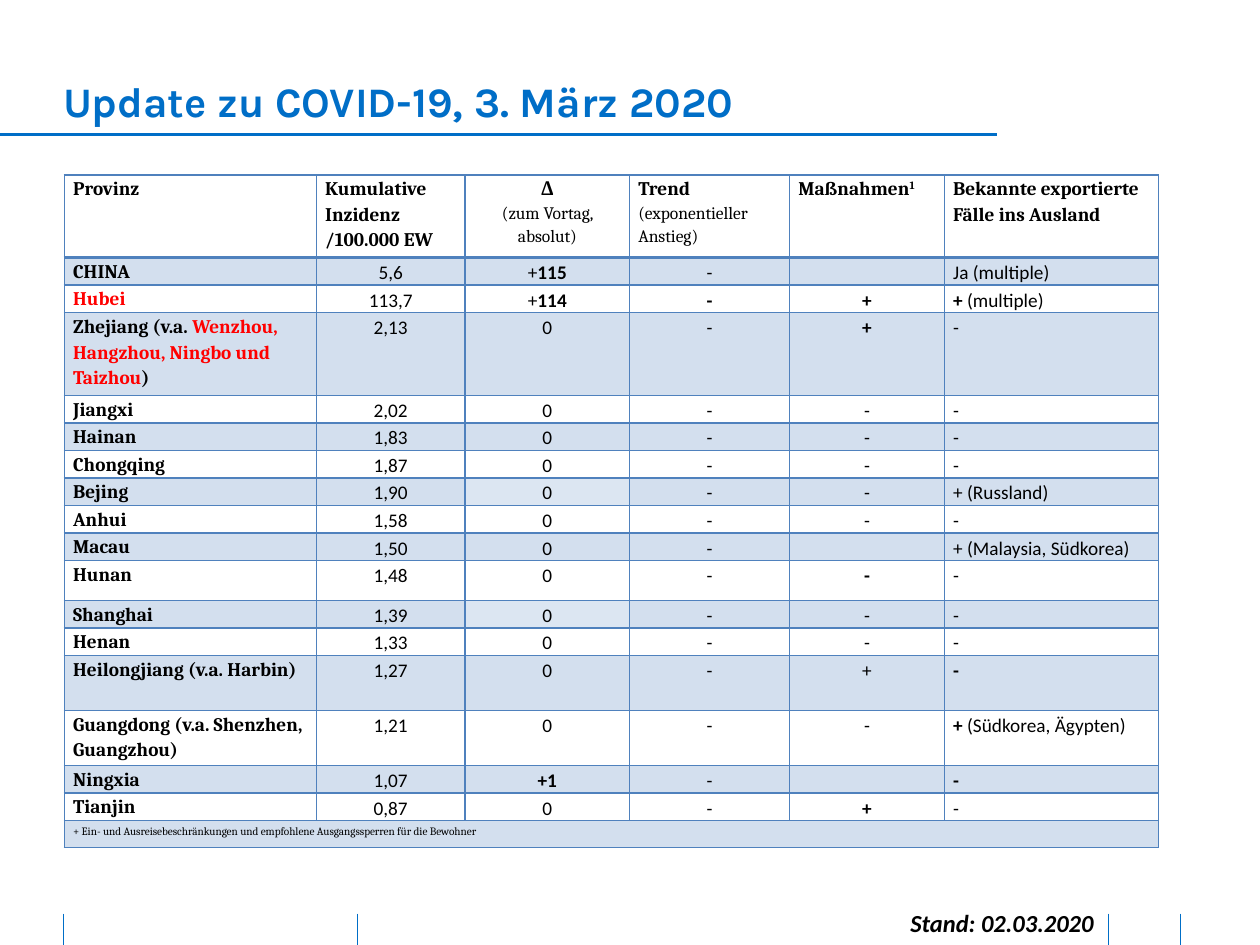
from lxml.etree import SubElement
from pptx import Presentation
from pptx.dml.color import RGBColor
from pptx.enum.shapes import MSO_CONNECTOR
from pptx.enum.text import MSO_ANCHOR, PP_ALIGN
from pptx.oxml.ns import qn
from pptx.util import Pt

HUES = {"blue": "006EC7", "grid": "4F81BD", "band": "D3DFEE",
        "pale": "DCE6F2", "red": "FF0000", "black": "000000"}
HUE = {name: RGBColor.from_string(code) for name, code in HUES.items()}

deck = Presentation()
deck.slide_width, deck.slide_height = Pt(720), Pt(540)
slide = deck.slides.add_slide(deck.slide_layouts[5])


def style(para, name, size, hue="black", bold=False):
    font = para.font
    font.name, font.size, font.bold = name, Pt(size), bold
    font.color.rgb = HUE[hue]


def edge(cell, side, width):
    line = SubElement(cell._tc.get_or_add_tcPr(), qn("a:" + side), w=str(Pt(width)))
    fill = SubElement(line, qn("a:solidFill"))
    SubElement(fill, qn("a:srgbClr"), val=HUES["grid"])


title = slide.shapes.title
title.left, title.top, title.width, title.height = Pt(36), Pt(43.2), Pt(637.2), Pt(28.8)
frame = title.text_frame
frame.margin_left = frame.margin_top = frame.margin_right = frame.margin_bottom = 0
frame.vertical_anchor = MSO_ANCHOR.MIDDLE
frame.text = "Update zu COVID-19, 3. März 2020"
frame.paragraphs[0].alignment = PP_ALIGN.LEFT
style(frame.paragraphs[0], "Karla", 24, "blue", True)

rules = [(x, 522, x, 540, 0.5) for x in (36, 204.5, 633.6, 674.6)]
rules.append((0, 77, 569.5, 77, 1.5))
for x1, y1, x2, y2, width in rules:
    rule = slide.shapes.add_connector(MSO_CONNECTOR.STRAIGHT, Pt(x1), Pt(y1), Pt(x2), Pt(y2))
    rule.line.color.rgb = HUE["blue"]
    rule.line.width = Pt(width)
    SubElement(rule._element.spPr, qn("a:effectLst"))

stand = slide.shapes.add_textbox(Pt(478.8), Pt(515.5), Pt(153.4), Pt(24.5))
stand.text_frame.word_wrap = True
para = stand.text_frame.paragraphs[0]
para.text = "Stand: 02.03.2020"
para.alignment = PP_ALIGN.RIGHT
style(para, "Calibri", 14, bold=True)
para.font.italic = True

# "*" = bold, "~" = red, "^" = superscript
rows = [
    ("Provinz", "Kumulative Inzidenz /100.000 EW", "Δ\n(zum Vortag, absolut)",
     "Trend\n(exponentieller Anstieg)", "Maßnahmen^1", "Bekannte exportierte Fälle ins Ausland"),
    ("CHINA", "5,6", "+*115", "-", "", "Ja (multiple)"),
    ("~Hubei", "113,7", "+*114", "*-", "*+", "*+* (multiple)"),
    ("Zhejiang (v.a. ~Wenzhou, Hangzhou, Ningbo und Taizhou~)", "2,13", "0", "-", "*+", "-"),
    ("Jiangxi", "2,02", "0", "-", "-", "-"),
    ("Hainan", "1,83", "0", "-", "-", "-"),
    ("Chongqing", "1,87", "0", "-", "-", "-"),
    ("Bejing", "1,90", "0", "-", "-", "+ (Russland)"),
    ("Anhui", "1,58", "0", "-", "-", "-"),
    ("Macau", "1,50", "0", "-", "", "+ (Malaysia, Südkorea)"),
    ("Hunan", "1,48", "0", "-", "*-", "-"),
    ("Shanghai", "1,39", "0", "-", "-", "-"),
    ("Henan", "1,33", "0", "-", "-", "-"),
    ("Heilongjiang (v.a. Harbin)", "1,27", "0", "-", "+", "*-"),
    ("Guangdong (v.a. Shenzhen, Guangzhou)", "1,21", "0", "-", "-", "*+* (Südkorea, Ägypten)"),
    ("Ningxia", "1,07", "*+1", "-", "", "*-"),
    ("Tianjin", "0,87", "0", "-", "*+", "-"),
    ("^+ Ein- und Ausreisebeschränkungen und empfohlene Ausgangssperren für die Bewohner",
     "", "", "", "", ""),
]
last = len(rows) - 1
wide = (144, 85, 94, 91.4, 88.5, 122.5)
high = {0: 47.25, 3: 47.25, 10: 22.75, 13: 31.5, 14: 31.5, last: 15}

grid = slide.shapes.add_table(len(rows), len(wide), Pt(36.8), Pt(100), Pt(sum(wide)), Pt(385)).table
grid.first_row = grid.horz_banding = False
for col, width in zip(grid.columns, wide):
    col.width = Pt(width)
for r, row in enumerate(rows):
    grid.rows[r].height = Pt(high.get(r, 15.75))
    for c, text in enumerate(row):
        cell = grid.cell(r, c)
        cell.margin_left = cell.margin_right = Pt(5)
        cell.margin_top = cell.margin_bottom = 0
        for side in ("lnL", "lnR", "lnT", "lnB"):
            edge(cell, side, 2.25 if (r, side) in ((0, "lnB"), (1, "lnT")) else 1)
        if r % 2:
            cell.fill.solid()
            cell.fill.fore_color.rgb = HUE["pale" if c == 2 and r in (7, 11) else "band"]
        else:
            cell.fill.background()
        head = r == 0 or (c == 0 and r < last)
        serif = r == 0 or c == 0
        for n, line in enumerate(text.split("\n")):
            para = cell.text_frame.paragraphs[0] if n == 0 else cell.text_frame.add_paragraph()
            para.line_spacing = 1.15
            if c == 2 or (r and 0 < c < 5):
                para.alignment = PP_ALIGN.CENTER
            elif row[0] == "Hainan" and c == 0:
                para.alignment = PP_ALIGN.JUSTIFY
            style(para, "Cambria" if serif else "Calibri", 10 if n else 11, bold=head and n == 0)
            if not line:
                SubElement(para._p, qn("a:endParaRPr"), sz="1100")
            for mark in "*~^":
                for k, part in enumerate(line.split(mark) if mark in line else ()):
                    if not part:
                        continue
                    run = para.add_run()
                    run.text = part
                    if k % 2 and mark == "*":
                        run.font.bold = True
                    elif k % 2 and mark == "~":
                        run.font.color.rgb = HUE["red"]
                    elif k % 2:
                        run._r.get_or_add_rPr().set("baseline", "30000")
            if line and not para.runs:
                para.add_run().text = line
grid.cell(last, 0).merge(grid.cell(last, 5))

deck.save("out.pptx")
